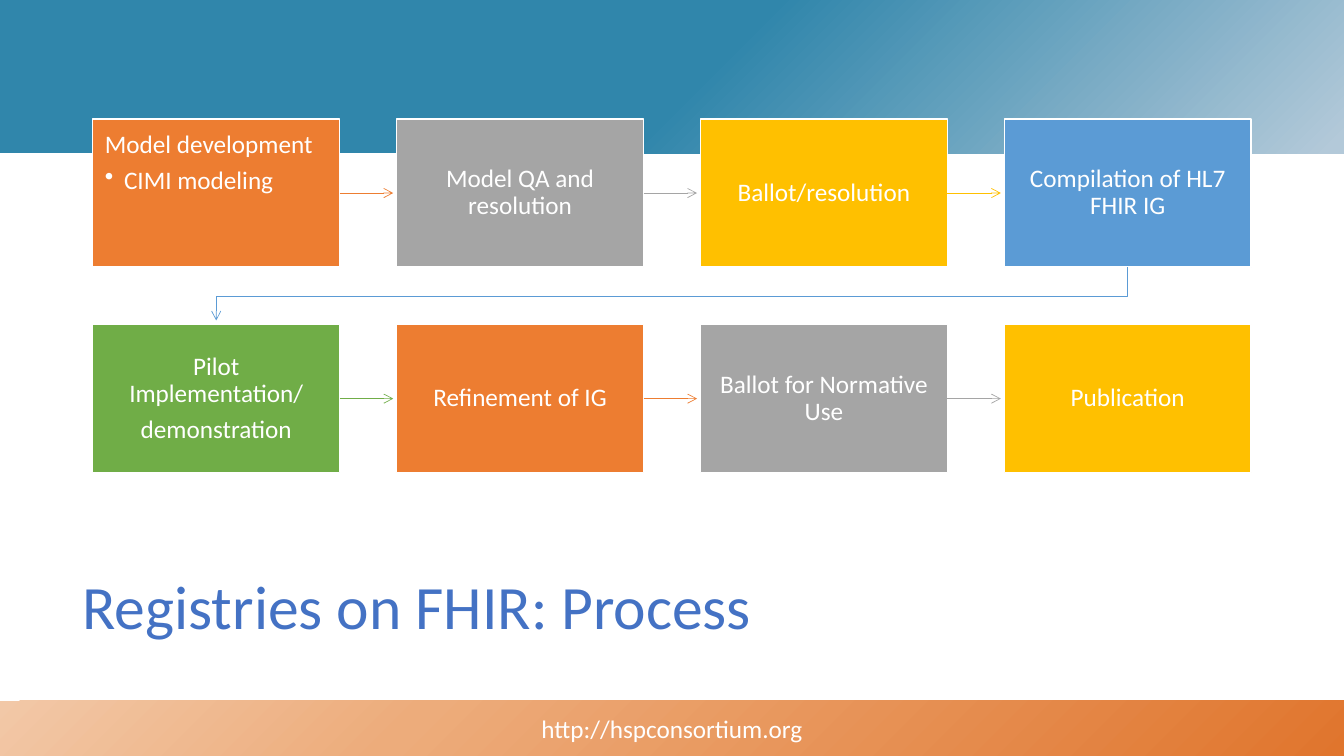
from dataclasses import dataclass

from lxml.etree import SubElement
from pptx import Presentation
from pptx.dml.color import RGBColor
from pptx.enum.shapes import MSO_CONNECTOR, MSO_SHAPE
from pptx.enum.text import MSO_ANCHOR, PP_ALIGN
from pptx.oxml import parse_xml
from pptx.oxml.ns import nsdecls, qn
from pptx.util import Inches, Pt


@dataclass(frozen=True)
class Theme:
    font: str = "Calibri"
    white: str = "FFFFFF"
    title: str = "4472C4"
    steps: tuple = ("ED7D31", "A5A5A5", "FFC000", "5B9BD5", "70AD47")
    header: tuple = ((1, "B3C9D9"), (48, "3086AB"), (97, "3086AB"))
    footer: tuple = ((0, "E0752D"), (69, "EDAC7B"), (100, "F2C8A7"))
    title_size: int = 44
    body_size: int = 18


theme = Theme()


def add_text(paragraph, text, size, color):
    run = paragraph.add_run()
    run.text = text
    run.font.name = theme.font
    run.font.size = Pt(size)
    run.font.color.rgb = RGBColor.from_string(color)


def style_arrow(arrow, color):
    arrow.line.color.rgb = RGBColor.from_string(color)
    arrow.line.width = Pt(0.5)
    properties = arrow.line._get_or_add_ln()
    SubElement(properties, qn("a:tailEnd"), type="arrow")


deck = Presentation()
deck.slide_width = Inches(13.33)
deck.slide_height = Inches(7.5)
slide = deck.slides.add_slide(deck.slide_layouts[6])

bands = []
for top, height, stops in ((0, 1.52, theme.header), (6.95, 0.55, theme.footer)):
    band = slide.shapes.add_shape(
        MSO_SHAPE.RECTANGLE, 0, Inches(top), deck.slide_width, Inches(height))
    band.shadow.inherit = False
    band.line.fill.background()
    band.fill.background()
    stop_xml = "".join(
        f'<a:gs pos="{position * 1000}"><a:srgbClr val="{color}"/></a:gs>'
        for position, color in stops)
    gradient = parse_xml(
        f'<a:gradFill {nsdecls("a")} rotWithShape="1"><a:gsLst>{stop_xml}</a:gsLst>'
        '<a:path path="circle"><a:fillToRect l="100000" t="100000"/></a:path>'
        '</a:gradFill>')
    properties = band.element.spPr
    properties.replace(properties.find(qn("a:noFill")), gradient)
    bands.append(band)

footer = bands[1].text_frame
footer.vertical_anchor = MSO_ANCHOR.MIDDLE
footer.paragraphs[0].alignment = PP_ALIGN.CENTER
add_text(footer.paragraphs[0], "http://hspconsortium.org", theme.body_size, theme.white)

title = slide.shapes.add_textbox(
    Inches(0.72), Inches(5.45), Inches(8.44), Inches(1.2)).text_frame
title.word_wrap = True
title.vertical_anchor = MSO_ANCHOR.MIDDLE
title.paragraphs[0].line_spacing = 0.9
add_text(title.paragraphs[0], "Registries on FHIR: Process", theme.title_size, theme.title)

steps = (
    ("Model development", "CIMI modeling"),
    ("Model QA and resolution",),
    ("Ballot/resolution",),
    ("Compilation of HL7 FHIR IG",),
    ("Pilot Implementation/", "demonstration"),
    ("Refinement of IG",),
    ("Ballot for Normative Use",),
    ("Publication",),
)
columns = 4
left, top = Inches(0.92), Inches(1.18)
step_width, step_height = Inches(2.45), Inches(1.47)
column_pitch = (Inches(9.96) - left) // (columns - 1)
row_pitch = Inches(2.04)
arrow_length = Inches(0.53)

boxes = []
for index, lines in enumerate(steps):
    row, column = divmod(index, columns)
    color = theme.steps[index % len(theme.steps)]
    box = slide.shapes.add_shape(
        MSO_SHAPE.RECTANGLE, left + column * column_pitch, top + row * row_pitch,
        step_width, step_height)
    box.shadow.inherit = False
    box.fill.solid()
    box.fill.fore_color.rgb = RGBColor.from_string(color)
    box.line.color.rgb = RGBColor.from_string(theme.white)
    box.line.width = Pt(1)
    boxes.append(box)

    has_bullet = index == 0
    label = box.text_frame
    label.word_wrap = True
    label.margin_left = label.margin_right = Inches(0.12)
    label.margin_top = label.margin_bottom = Inches(0.13)
    label.vertical_anchor = MSO_ANCHOR.TOP if has_bullet else MSO_ANCHOR.MIDDLE
    for number, line in enumerate(lines):
        paragraph = label.add_paragraph() if number else label.paragraphs[0]
        if has_bullet and number:
            bullet = paragraph._p.get_or_add_pPr()
            bullet.set("marL", str(Inches(0.19)))
            bullet.set("indent", str(-Inches(0.19)))
            SubElement(bullet, qn("a:buChar"), char="•")
            paragraph.level = 1
        paragraph.alignment = PP_ALIGN.LEFT if has_bullet else PP_ALIGN.CENTER
        paragraph.line_spacing = 0.9
        paragraph.space_after = Pt(6)
        add_text(paragraph, line, theme.body_size, theme.white)

    if column < columns - 1:
        start = box.left + box.width
        middle = box.top + box.height // 2
        arrow = slide.shapes.add_connector(
            MSO_CONNECTOR.STRAIGHT, start, middle, start + arrow_length, middle)
        arrow.begin_connect(box, 3)
        style_arrow(arrow, color)
        SubElement(arrow._element.spPr, qn("a:effectLst"))

row_end, row_start = boxes[columns - 1], boxes[columns]
start_x = row_end.left + step_width // 2
end_x = row_start.left + step_width // 2
start_y = row_end.top + step_height
turn_y = start_y + Inches(0.29)
builder = slide.shapes.build_freeform(start_x, start_y)
builder.add_line_segments(
    [(start_x, turn_y), (end_x, turn_y), (end_x, start_y + arrow_length)], close=False)
row_link = builder.convert_to_shape()
row_link.shadow.inherit = False
row_link.fill.background()
style_arrow(row_link, theme.steps[columns - 1])

deck.save("out.pptx")
